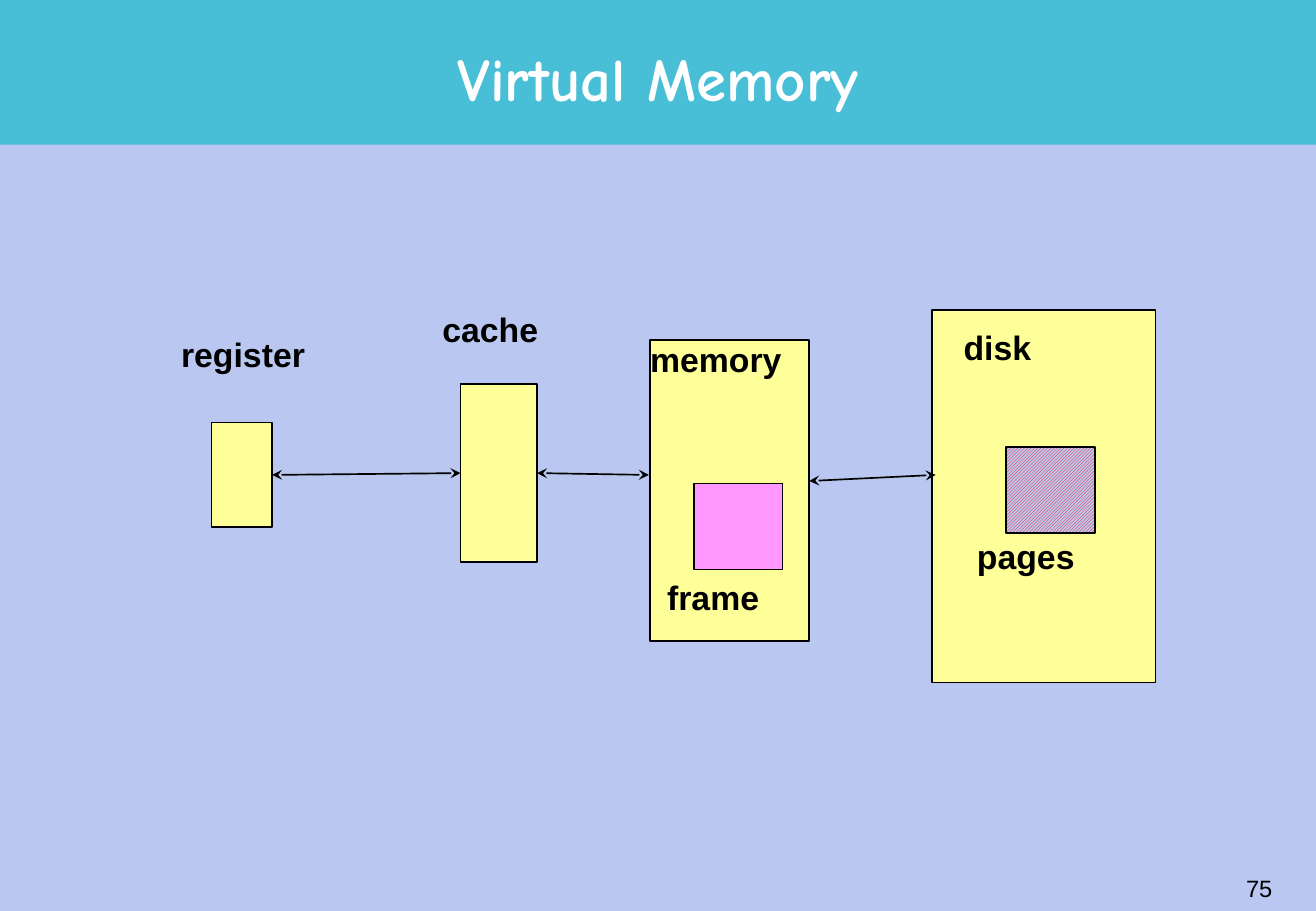
from lxml import etree
from pptx import Presentation
from pptx.dml.color import RGBColor
from pptx.enum.dml import MSO_PATTERN
from pptx.enum.shapes import MSO_CONNECTOR, MSO_SHAPE
from pptx.enum.text import MSO_ANCHOR, PP_ALIGN
from pptx.oxml.ns import qn
from pptx.util import Pt

PX = 9144
RECTANGLE = MSO_SHAPE.RECTANGLE
STRAIGHT = MSO_CONNECTOR.STRAIGHT
DIAGONAL = MSO_PATTERN.LIGHT_UPWARD_DIAGONAL
TOP, MIDDLE = MSO_ANCHOR.TOP, MSO_ANCHOR.MIDDLE
LEFT, CENTER, RIGHT = PP_ALIGN.LEFT, PP_ALIGN.CENTER, PP_ALIGN.RIGHT
LEFT_SIDE, RIGHT_SIDE = 1, 3
TITLE_ONLY = 5

COLORS = {
    "background": "BAC8F1",
    "banner": "49BFD7",
    "storage": "FFFF99",
    "frame": "FF99FF",
    "hatch": "FF0000",
    "ink": "000000",
    "title": "FFFFFF",
}
STORES = {
    "register": (174, 348, 50, 86),
    "cache": (379, 316, 63, 147),
    "memory": (535, 280, 131, 248),
    "disk": (767, 255, 184, 307),
}
LABELS = [
    ("register", (142, 274, 129, 43), 0.97),
    ("cache", (357, 253, 104, 43), 0.97),
    ("memory", (528, 281, 137, 39), 0.85),
    ("disk", (786, 271, 78, 39), 0.85),
    ("frame", (542, 477, 100, 39), 0.85),
    ("pages", (797, 442, 106, 41), 0.9),
]
BLOCK_SIZE = (73, 71)


def color(name):
    return RGBColor.from_string(COLORS[name])


def px(*lengths):
    return [length * PX for length in lengths]


def write(shape, text, font="Arial", size=20, ink="ink", bold=True, align=LEFT,
          anchor=TOP, spacing=1.0, margins=(7, 3)):
    frame = shape.text_frame
    frame.word_wrap = True
    frame.vertical_anchor = anchor
    side, edge = px(*margins)
    frame.margin_left = frame.margin_right = side
    frame.margin_top = frame.margin_bottom = edge
    para = frame.paragraphs[0]
    para.alignment = align
    para.line_spacing = spacing
    span = para.add_run()
    span.text = text
    span.font.name = font
    span.font.size = Pt(size)
    span.font.bold = bold
    span.font.color.rgb = color(ink)


def add_text(page, bounds, text, **style):
    write(page.shapes.add_textbox(*px(*bounds)), text, **style)


def add_box(page, bounds, fill, outlined=True):
    box = page.shapes.add_shape(RECTANGLE, *px(*bounds))
    box.shadow.inherit = False
    box.fill.solid()
    box.fill.fore_color.rgb = color(fill)
    if outlined:
        box.line.color.rgb = color("ink")
        box.line.width = Pt(1)
    else:
        box.line.fill.background()
    return box


def add_arrow(page, start, end):
    arrow = page.shapes.add_connector(STRAIGHT, *px(*start, *end))
    arrow.line.color.rgb = color("ink")
    arrow.line.width = Pt(1)
    line = arrow.line._get_or_add_ln()
    for tag in ("a:headEnd", "a:tailEnd"):
        etree.SubElement(line, qn(tag), type="stealth")
    etree.SubElement(arrow.element.spPr, qn("a:effectLst"))
    return arrow


def add_title(page, text):
    banner = add_box(page, (0, 0, 1083, 119), "banner", outlined=False)
    title = page.shapes.title
    title.element.addprevious(banner.element)
    title.left, title.top, title.width, title.height = px(81, 19, 921, 99)
    write(title, text, font="Comic Neue", size=36, ink="title", align=CENTER,
          anchor=MIDDLE, spacing=0.85, margins=(10, 5))


def main():
    deck = Presentation()
    deck.slide_width, deck.slide_height = px(1083, 750)
    page = deck.slides.add_slide(deck.slide_layouts[TITLE_ONLY])
    page.background.fill.solid()
    page.background.fill.fore_color.rgb = color("background")
    add_title(page, "Virtual Memory")

    stores = {name: add_box(page, bounds, "storage") for name, bounds in STORES.items()}

    register_cache = add_arrow(page, (226, 391), (376, 391))
    register_cache.begin_connect(stores["register"], RIGHT_SIDE)
    register_cache.end_connect(stores["cache"], LEFT_SIDE)
    cache_memory = add_arrow(page, (443, 391), (534, 391))
    cache_memory.begin_connect(stores["cache"], RIGHT_SIDE)
    add_arrow(page, (666, 396), (770, 391))

    add_box(page, (571, 398, *BLOCK_SIZE), "frame")
    pages = add_box(page, (828, 368, *BLOCK_SIZE), "background")
    pages.fill.patterned()
    pages.fill.pattern = DIAGONAL
    pages.fill.fore_color.rgb = color("hatch")
    pages.fill.back_color.rgb = color("background")

    for text, bounds, spacing in LABELS:
        add_text(page, bounds, text, spacing=spacing)
    add_text(page, (831, 706, 226, 50), "75", size=14, bold=False, align=RIGHT,
             anchor=MIDDLE, margins=(10, 5))
    deck.save("out.pptx")


if __name__ == "__main__":
    main()
